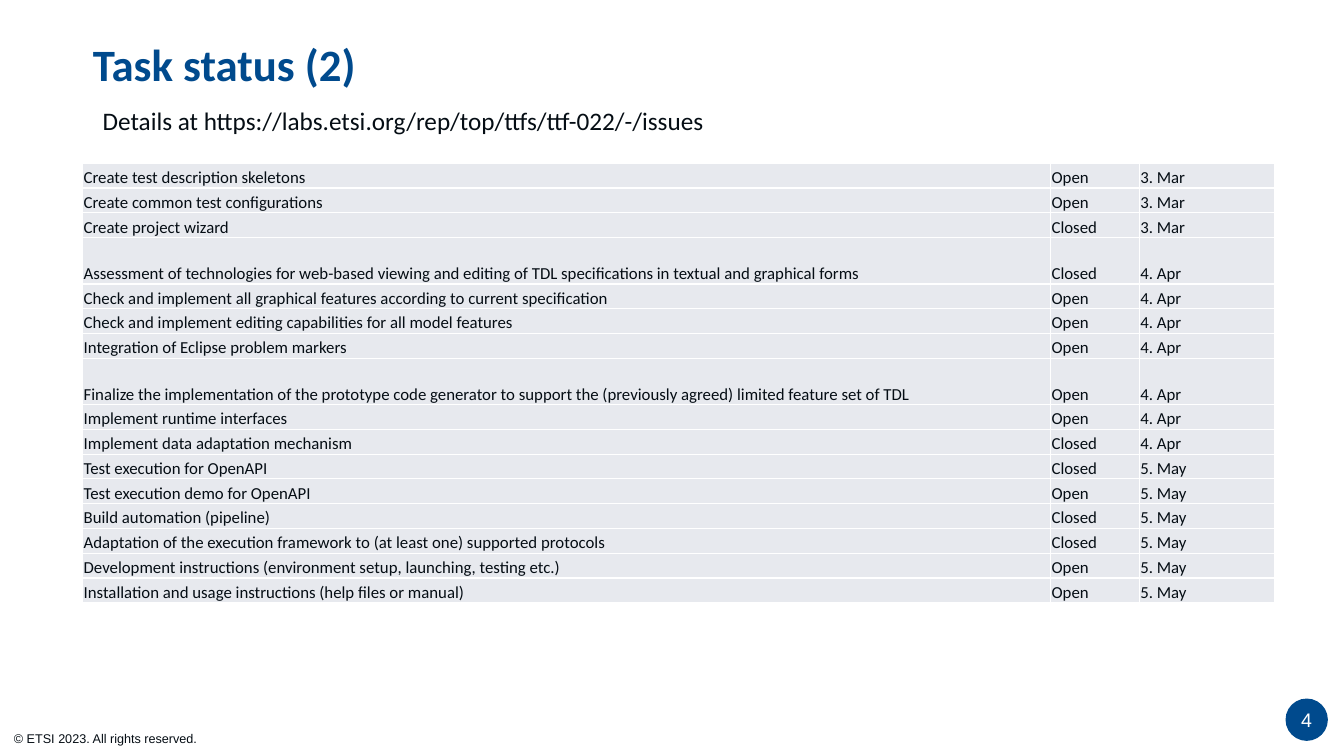
from dataclasses import dataclass

from lxml.etree import SubElement
from pptx import Presentation
from pptx.dml.color import RGBColor as RGB
from pptx.enum.shapes import MSO_SHAPE as Shape
from pptx.enum.text import MSO_ANCHOR as Anchor, MSO_AUTO_SIZE as AutoSize, PP_ALIGN as Align
from pptx.oxml.ns import qn
from pptx.util import Inches, Pt


@dataclass(frozen=True)
class Theme:
    blue: str = "004A8D"
    ink: str = "050D14"
    white: str = "FFFFFF"
    cell: str = "E7E9EE"
    body_font: str = "Calibri"
    footer_font: str = "Arial"
    title_size: int = 32
    details_size: int = 18
    number_size: int = 14
    table_size: int = 12
    footer_size: int = 9


TASKS = [
    ("Create test description skeletons", "Open", "3. Mar"),
    ("Create common test configurations", "Open", "3. Mar"),
    ("Create project wizard", "Closed", "3. Mar"),
    ("Assessment of technologies for web-based viewing and editing of TDL specifications "
     "in textual and graphical forms", "Closed", "4. Apr"),
    ("Check and implement all graphical features according to current specification", "Open", "4. Apr"),
    ("Check and implement editing capabilities for all model features", "Open", "4. Apr"),
    ("Integration of Eclipse problem markers", "Open", "4. Apr"),
    ("Finalize the implementation of the prototype code generator to support the "
     "(previously agreed) limited feature set of TDL", "Open", "4. Apr"),
    ("Implement runtime interfaces", "Open", "4. Apr"),
    ("Implement data adaptation mechanism", "Closed", "4. Apr"),
    ("Test execution for OpenAPI", "Closed", "5. May"),
    ("Test execution demo for OpenAPI", "Open", "5. May"),
    ("Build automation (pipeline)", "Closed", "5. May"),
    ("Adaptation of the execution framework to (at least one) supported protocols", "Closed", "5. May"),
    ("Development instructions (environment setup, launching, testing etc.)", "Open", "5. May"),
    ("Installation and usage instructions (help files or manual)", "Open", "5. May"),
]
COLUMN_WIDTHS = (9.6, 0.88, 1.34)
TABLE_HEIGHT = 4.36
TALL_ROW = 0.46
LONG_TASK = 100  # characters from which a task gets a tall row


class SlideBuilder:
    def __init__(self, slide, theme):
        self.slide = slide
        self.theme = theme

    def set_text(self, frame, text, size, color, font=None, bold=False):
        frame.text = text
        style = frame.paragraphs[0].runs[0].font
        style.name = font or self.theme.body_font
        style.size = Pt(size)
        style.bold = bold
        style.color.rgb = RGB.from_string(color)

    def title(self, text, left, top, width, height):
        title = self.slide.shapes.title
        title.left, title.top, title.width, title.height = map(Inches, (left, top, width, height))
        frame = title.text_frame
        self.set_text(frame, text, self.theme.title_size, self.theme.blue, bold=True)
        frame.vertical_anchor = Anchor.TOP
        frame.paragraphs[0].alignment = Align.LEFT
        frame.paragraphs[0].line_spacing = 0.9

    def label(self, text, box, size, color, font=None, wrap=True, grow=True,
              align=Align.LEFT, anchor=Anchor.TOP):
        frame = self.slide.shapes.add_textbox(*map(Inches, box)).text_frame
        frame.word_wrap = wrap
        frame.auto_size = AutoSize.SHAPE_TO_FIT_TEXT if grow else AutoSize.NONE
        frame.vertical_anchor = anchor
        self.set_text(frame, text, size, color, font)
        frame.paragraphs[0].alignment = align

    def disc(self, left, top, diameter):
        disc = self.slide.shapes.add_shape(
            Shape.OVAL, *map(Inches, (left, top, diameter, diameter)))
        disc.shadow.inherit = False
        disc.fill.solid()
        disc.fill.fore_color.rgb = RGB.from_string(self.theme.blue)
        disc.line.fill.background()

    def task_table(self, tasks, left, top):
        table = self.slide.shapes.add_table(
            len(tasks), len(COLUMN_WIDTHS),
            *map(Inches, (left, top, sum(COLUMN_WIDTHS), TABLE_HEIGHT))).table
        table.first_row = table.horz_banding = False
        for column, width in zip(table.columns, COLUMN_WIDTHS):
            column.width = Inches(width)
        tall = sum(len(task) >= LONG_TASK for task, *_ in tasks)
        short_row = (TABLE_HEIGHT - tall * TALL_ROW) / (len(tasks) - tall)
        for row, entry in zip(table.rows, tasks):
            row.height = Inches(TALL_ROW if len(entry[0]) >= LONG_TASK else short_row)
            for cell, text in zip(row.cells, entry):
                self.table_cell(cell, text)

    def table_cell(self, cell, text):
        self.set_text(cell.text_frame, text, self.theme.table_size, self.theme.ink)
        cell.vertical_anchor = Anchor.BOTTOM
        cell.margin_left = cell.margin_right = cell.margin_top = Inches(0.01)
        cell.margin_bottom = 0
        properties = cell._tc.get_or_add_tcPr()
        for side in ("a:lnL", "a:lnR", "a:lnT", "a:lnB"):
            border = SubElement(properties, qn(side), w=str(Pt(1)))
            fill = SubElement(border, qn("a:solidFill"))
            SubElement(fill, qn("a:srgbClr"), val=self.theme.white)
        cell.fill.solid()
        cell.fill.fore_color.rgb = RGB.from_string(self.theme.cell)


def main():
    deck = Presentation()
    deck.slide_width, deck.slide_height = Inches(13.33), Inches(7.5)
    theme = Theme()
    page = SlideBuilder(deck.slides.add_slide(deck.slide_layouts[5]), theme)

    page.label("© ETSI 2023. All rights reserved.", (0.04, 7.2, 2.04, 0.25),
               theme.footer_size, theme.ink, theme.footer_font, wrap=False)
    page.disc(12.75, 6.93, 0.42)
    page.title("Task status (2)", 0.82, 0.37, 7.11, 1.25)
    page.label("4", (12.63, 6.93, 0.66, 0.42), theme.number_size, theme.white,
               theme.footer_font, grow=False, align=Align.CENTER, anchor=Anchor.MIDDLE)
    page.label("Details at https://labs.etsi.org/rep/top/ttfs/ttf-022/-/issues",
               (0.92, 1, 6.66, 0.4), theme.details_size, theme.ink)
    page.task_table(TASKS, 0.82, 1.62)
    deck.save("out.pptx")


if __name__ == "__main__":
    main()
